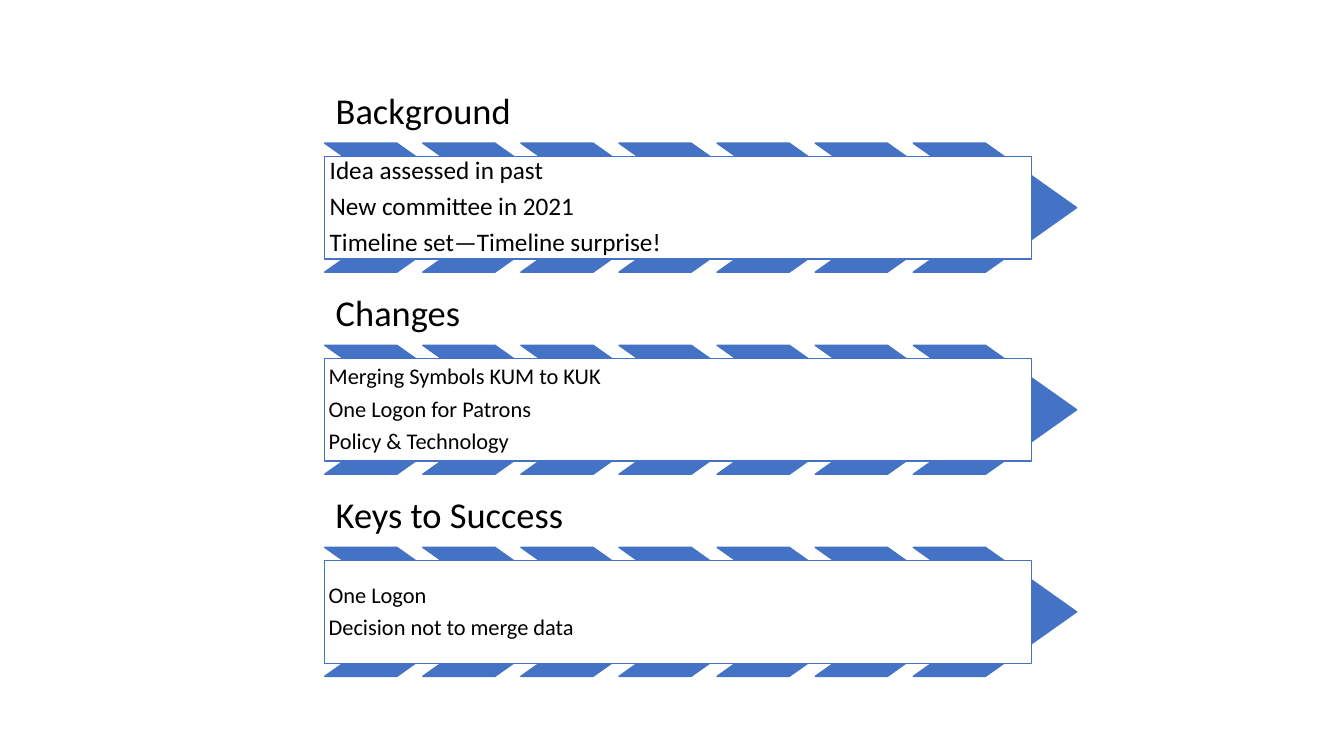
from dataclasses import dataclass
from pptx import Presentation
from pptx.dml.color import RGBColor as Rgb
from pptx.enum.shapes import MSO_SHAPE as Shape
from pptx.enum.text import MSO_ANCHOR as Anchor, PP_ALIGN as Align
from pptx.util import Inches, Pt

# Content: heading, body type size, body inset, body lines
BANDS = [
    ("Background", 18, 0.05, ["Idea assessed in past", "New committee in 2021",
                              "Timeline set—Timeline surprise!"]),
    ("Changes", 16, 0.04, ["Merging Symbols KUM to KUK", "One Logon for Patrons",
                           "Policy & Technology"]),
    ("Keys to Success", 16, 0.04, ["One Logon", "Decision not to merge data"]),
]


@dataclass(frozen=True)
class Theme:
    font: str = "Calibri"
    head: int = 26
    ink: Rgb = Rgb(0, 0, 0)
    blue: Rgb = Rgb(0x44, 0x72, 0xC4)
    white: Rgb = Rgb(255, 255, 255)


THEME = Theme()

# Layout in inches
LEFT, TOP, PITCH = 3.22, 0.79, 2.005
HEAD_W, HEAD_H = 6.92, 0.63
COUNT, STEP = 7, 0.973
ARROW_W, ARROW_H, POINT = 1.62, 1.28, 0.706
BODY_W, BODY_H = 7.01, 1.02


def write(shape, lines, size, inset, anchor):
    frame = shape.text_frame
    frame.word_wrap = True
    frame.vertical_anchor = anchor
    frame.margin_left = frame.margin_right = Inches(inset)
    frame.margin_top = frame.margin_bottom = Inches(inset)
    frame.text = "\n".join(lines)
    for para in frame.paragraphs:
        para.alignment = Align.LEFT
        para.line_spacing = 0.9
        para.space_after = Pt(size * 0.35)
        para.font.name = THEME.font
        para.font.size = Pt(size)
        para.font.color.rgb = THEME.ink


def draw(slide, kind, x, y, w, h, fill):
    shape = slide.shapes.add_shape(kind, Inches(x), Inches(y), Inches(w), Inches(h))
    shape.shadow.inherit = False
    shape.fill.solid()
    shape.fill.fore_color.rgb = fill
    shape.line.color.rgb = THEME.blue
    shape.line.width = Pt(1)
    return shape


def add_band(slide, top, head, size, inset, lines):
    # Heading
    box = slide.shapes.add_textbox(Inches(LEFT), Inches(top), Inches(HEAD_W), Inches(HEAD_H))
    write(box, [head], THEME.head, 0.11, Anchor.BOTTOM)

    # Row of chevrons
    row = top + HEAD_H
    for i in range(COUNT):
        arrow = draw(slide, Shape.CHEVRON, LEFT + i * STEP, row, ARROW_W, ARROW_H, THEME.blue)
        arrow.adjustments[0] = POINT

    # Body panel, centred on the row
    y = row + (ARROW_H - BODY_H) / 2
    panel = draw(slide, Shape.RECTANGLE, LEFT, y, BODY_W, BODY_H, THEME.white)
    write(panel, lines, size, inset, Anchor.MIDDLE)


def main():
    deck = Presentation()
    deck.slide_width, deck.slide_height = Inches(13.33), Inches(7.5)
    slide = deck.slides.add_slide(deck.slide_layouts[6])
    for i, band in enumerate(BANDS):
        add_band(slide, TOP + i * PITCH, *band)
    deck.save("out.pptx")


if __name__ == "__main__":
    main()
